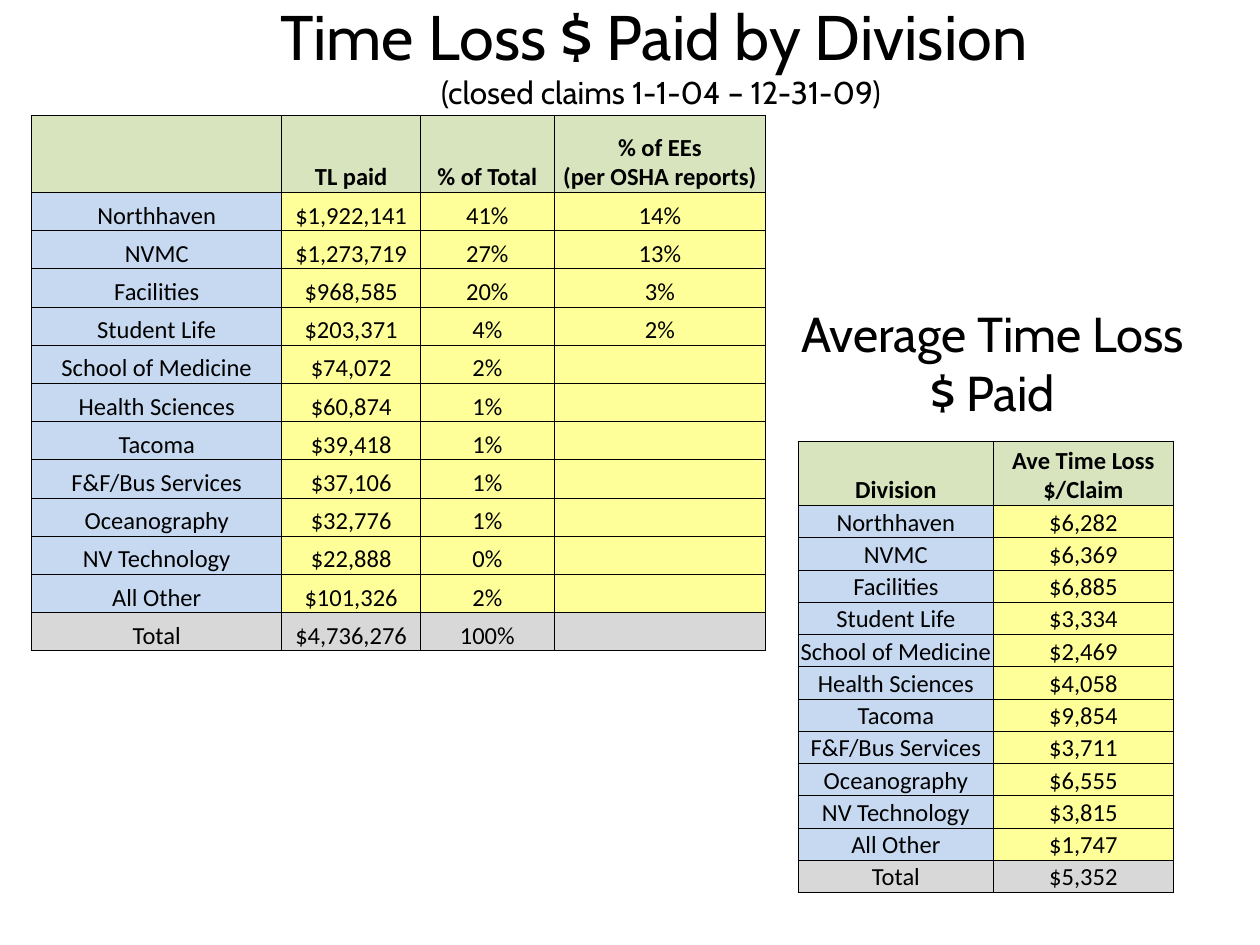
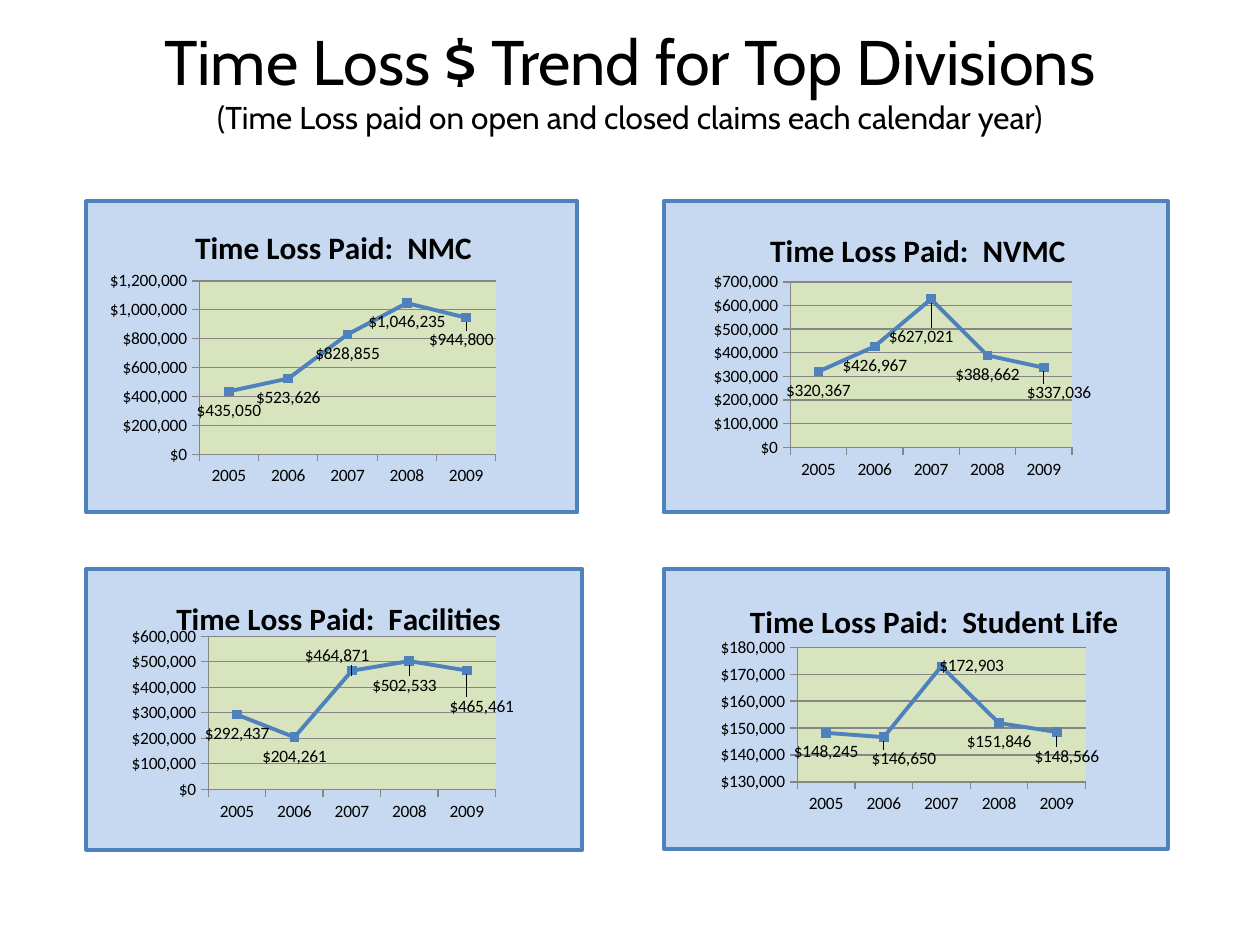
import dataclasses

import lxml.etree
import pptx
import pptx.chart.data
import pptx.dml.color
import pptx.enum.chart
import pptx.enum.text
import pptx.oxml
import pptx.oxml.ns
import pptx.util

Cm = pptx.util.Cm
Pt = pptx.util.Pt
qn = pptx.oxml.ns.qn
Color = pptx.dml.color.RGBColor.from_string


@dataclasses.dataclass(frozen=True)
class Theme:
    heading_font: str = "Cabin"
    body_font: str = "Calibri"
    ink: str = "000000"
    green: str = "D7E4BD"
    blue: str = "C6D9F1"
    yellow: str = "FFFF99"
    gray: str = "D8D8D8"
    accent: str = "4F81BD"
    grid: str = "868686"
    title_size: int = 36
    heading_size: int = 28
    subtitle_size: int = 18
    chart_title_size: int = 18
    table_size: int = 14
    chart_size: int = 10
    border: float = 0.5
    chart_line: float = 2.25


theme = Theme()


def write(frame, text, *, size, font=theme.body_font, bold=False, extend=False):
    for number, line in enumerate(text.split("\n")):
        para = frame.add_paragraph() if number or extend else frame.paragraphs[0]
        para.alignment = pptx.enum.text.PP_ALIGN.CENTER
        span = para.add_run()
        span.text = line
        span.font.size = Pt(size)
        span.font.name = font
        span.font.bold = bold
        span.font.color.rgb = Color(theme.ink)


def set_layout(parent, index, **settings):
    for old in parent.findall(qn("c:layout")):
        parent.remove(old)
    layout = lxml.etree.Element(qn("c:layout"))
    manual = lxml.etree.SubElement(layout, qn("c:manualLayout"))
    for name, value in settings.items():
        lxml.etree.SubElement(manual, qn(f"c:{name}")).set("val", str(value))
    parent.insert(index, layout)


deck = pptx.Presentation()
deck.slide_width = Cm(25.4)
deck.slide_height = Cm(19.05)
blank = deck.slide_layouts[6]
division_page = deck.slides.add_slide(blank)
trend_page = deck.slides.add_slide(blank)

headings = [
    (division_page, (4.65, 0.43, 17.35, 2.11), 0.9,
     "Time Loss $ Paid by Division ", theme.title_size,
     "(closed claims 1-1-04 – 12-31-09)"),
    (division_page, (15.88, 5.72, 8.26, 3.18), 0.13,
     "Average Time Loss $ Paid", theme.heading_size, None),
    (trend_page, (1.27, 0, 22.86, 3.18), 0.13,
     "Time Loss $ Trend for Top Divisions", theme.title_size,
     "(Time Loss paid on open and closed claims each calendar year)"),
]
for page, place, bottom_inset, title, size, subtitle in headings:
    frame = page.shapes.add_textbox(*map(Cm, place)).text_frame
    frame.word_wrap = True
    frame.vertical_anchor = pptx.enum.text.MSO_ANCHOR.MIDDLE
    frame.margin_left = frame.margin_right = Cm(0.1)
    frame.margin_bottom = Cm(bottom_inset)
    write(frame, title, size=size, font=theme.heading_font)
    if subtitle:
        write(frame, subtitle, size=theme.subtitle_size,
              font=theme.heading_font, extend=True)

divisions = [
    ("Northhaven", "$1,922,141", "41%", "14%", "$6,282"),
    ("NVMC", "$1,273,719", "27%", "13%", "$6,369"),
    ("Facilities", "$968,585", "20%", "3%", "$6,885"),
    ("Student Life", "$203,371", "4%", "2%", "$3,334"),
    ("School of Medicine", "$74,072", "2%", "", "$2,469"),
    ("Health Sciences", "$60,874", "1%", "", "$4,058"),
    ("Tacoma", "$39,418", "1%", "", "$9,854"),
    ("F&F/Bus Services", "$37,106", "1%", "", "$3,711"),
    ("Oceanography", "$32,776", "1%", "", "$6,555"),
    ("NV Technology", "$22,888", "0%", "", "$3,815"),
    ("All Other", "$101,326", "2%", "", "$1,747"),
    ("Total", "$4,736,276", "100%", "", "$5,352"),
]
paid_rows = [("", "TL paid", "% of Total", "% of EEs\n(per OSHA reports)")]
paid_rows += [division[:4] for division in divisions]
average_rows = [("Division", "Ave Time Loss $/Claim")]
average_rows += [(division[0], division[4]) for division in divisions]

tables = [
    (0.64, 2.33, (5.04, 2.8, 2.69, 4.27), 1.55, 0.77, paid_rows),
    (16.09, 8.89, (3.94, 3.62), 1.3, 0.65, average_rows),
]
for left, top, widths, header_height, row_height, rows in tables:
    height = header_height + row_height * len(divisions)
    table = division_page.shapes.add_table(
        len(rows), len(widths), Cm(left), Cm(top), Cm(sum(widths)), Cm(height)).table
    table.first_row = False
    table.horz_banding = False
    for column, width in zip(table.columns, widths):
        column.width = Cm(width)
    for row_index, texts in enumerate(rows):
        header = row_index == 0
        table.rows[row_index].height = Cm(header_height if header else row_height)
        for column_index, text in enumerate(texts):
            cell = table.cell(row_index, column_index)
            cell.margin_left = cell.margin_right = 0
            cell.margin_top = cell.margin_bottom = 0
            cell.vertical_anchor = pptx.enum.text.MSO_ANCHOR.BOTTOM
            properties = cell._tc.get_or_add_tcPr()
            for side in ("lnL", "lnR", "lnT", "lnB"):
                line = lxml.etree.SubElement(
                    properties, qn(f"a:{side}"), w=str(Pt(theme.border)))
                fill = lxml.etree.SubElement(line, qn("a:solidFill"))
                lxml.etree.SubElement(fill, qn("a:srgbClr"), val=theme.ink)
            if header:
                color = theme.green
            elif texts[0] == "Total":
                color = theme.gray
            else:
                color = theme.yellow if column_index else theme.blue
            cell.fill.solid()
            cell.fill.fore_color.rgb = Color(color)
            write(cell.text_frame, text, size=theme.table_size, bold=header)

years = ["2005", "2006", "2007", "2008", "2009"]
dollars = '"$"#,##0'
trends = [
    dict(name="NMC", place=(1.7, 4.02, 9.98, 6.35),
         values=(435050, 523626, 828855, 1046235, 944800),
         scale=(0, 1200000, 200000), title=(0.21, 0.06),
         plot=(0.23, 0.256, 0.604, 0.557), moved={4: (-0.01, 0.01)}),
    dict(name="NVMC", place=(13.34, 4.02, 10.24, 6.35),
         values=(320367, 426967, 627021, 388662, 337036),
         scale=(0, 700000, 100000), title=(0.2, 0.07),
         plot=(0.251, 0.259, 0.559, 0.532),
         moved={2: (-0.02, 0.06), 4: (0.03, 0.02)}),
    dict(name="Facilities", place=(1.7, 11.43, 10.08, 5.74),
         values=(292437, 204261, 464871, 502533, 465461),
         scale=(0, 600000, 100000), title=(0.17, 0.08),
         plot=(0.246, 0.24, 0.579, 0.545),
         moved={2: (-0.03, -0.12), 3: (-0.01, 0.02), 4: (0.03, 0.06)}),
    dict(name="Student Life", place=(13.34, 11.43, 10.24, 5.72),
         values=(148245, 146650, 172903, 151846, 148566),
         scale=(130000, 180000, 10000), title=(0.16, 0.09),
         plot=(0.265, 0.28, 0.572, 0.482),
         moved={1: (0.04, 0.01), 2: (0.06, -0.07), 4: (0.02, 0.02)}),
]
below = pptx.enum.chart.XL_LABEL_POSITION.BELOW
for trend in trends:
    data = pptx.chart.data.CategoryChartData(number_format=dollars)
    data.categories = years
    data.add_series("Series 1", trend["values"])
    chart = trend_page.shapes.add_chart(
        pptx.enum.chart.XL_CHART_TYPE.LINE_MARKERS_STACKED,
        *map(Cm, trend["place"]), data).chart
    chart.has_legend = False
    chart.font.size = Pt(theme.chart_size)
    chart.font.name = theme.body_font
    chart.font.color.rgb = Color(theme.ink)

    chart.has_title = True
    write(chart.chart_title.text_frame, f"Time Loss Paid:  {trend['name']}",
          size=theme.chart_title_size, bold=True)
    x, y = trend["title"]
    set_layout(chart.chart_title._element, 1, xMode="edge", yMode="edge", x=x, y=y)

    values = chart.value_axis
    values.minimum_scale, values.maximum_scale, values.major_unit = trend["scale"]
    values.has_major_gridlines = True
    values.major_gridlines.format.line.color.rgb = Color(theme.grid)
    values.tick_labels.number_format = dollars
    values.tick_labels.number_format_is_linked = False
    for axis in (values, chart.category_axis):
        axis.major_tick_mark = pptx.enum.chart.XL_TICK_MARK.OUTSIDE
        axis.format.line.color.rgb = Color(theme.grid)

    chart.plots[0].vary_by_categories = False
    series = chart.plots[0].series[0]
    series.smooth = False
    series.format.line.color.rgb = Color(theme.accent)
    series.format.line.width = Pt(theme.chart_line)
    series.marker.style = pptx.enum.chart.XL_MARKER_STYLE.SQUARE
    series.marker.size = 5
    series.marker.format.fill.solid()
    series.marker.format.fill.fore_color.rgb = Color(theme.accent)
    series.marker.format.line.color.rgb = Color(theme.accent)
    series.data_labels.show_value = True
    series.data_labels.position = below
    for index, (x, y) in trend["moved"].items():
        label = series.points[index].data_label
        label.position = below
        set_layout(label._dLbl, 1, x=x, y=y)

    space = chart._chartSpace
    body = space.find(qn("c:chart"))
    plot_area = body.find(qn("c:plotArea"))
    x, y, w, h = trend["plot"]
    set_layout(plot_area, 0, layoutTarget="inner", xMode="edge", yMode="edge",
               x=x, y=y, w=w, h=h)
    outline = (f'<a:ln w="{Pt(theme.chart_line)}"><a:solidFill>'
               f'<a:srgbClr val="{theme.accent}"/></a:solidFill></a:ln>')
    areas = [(plot_area, theme.green, "<a:ln><a:noFill/></a:ln>"),
             (body, theme.blue, outline)]
    for area, color, line in areas:
        style = pptx.oxml.parse_xml(
            f'<c:spPr {pptx.oxml.ns.nsdecls("c", "a")}><a:solidFill>'
            f'<a:srgbClr val="{color}"/></a:solidFill>{line}</c:spPr>')
        if area is body:
            body.addnext(style)
        else:
            area.append(style)

deck.save("out.pptx")
